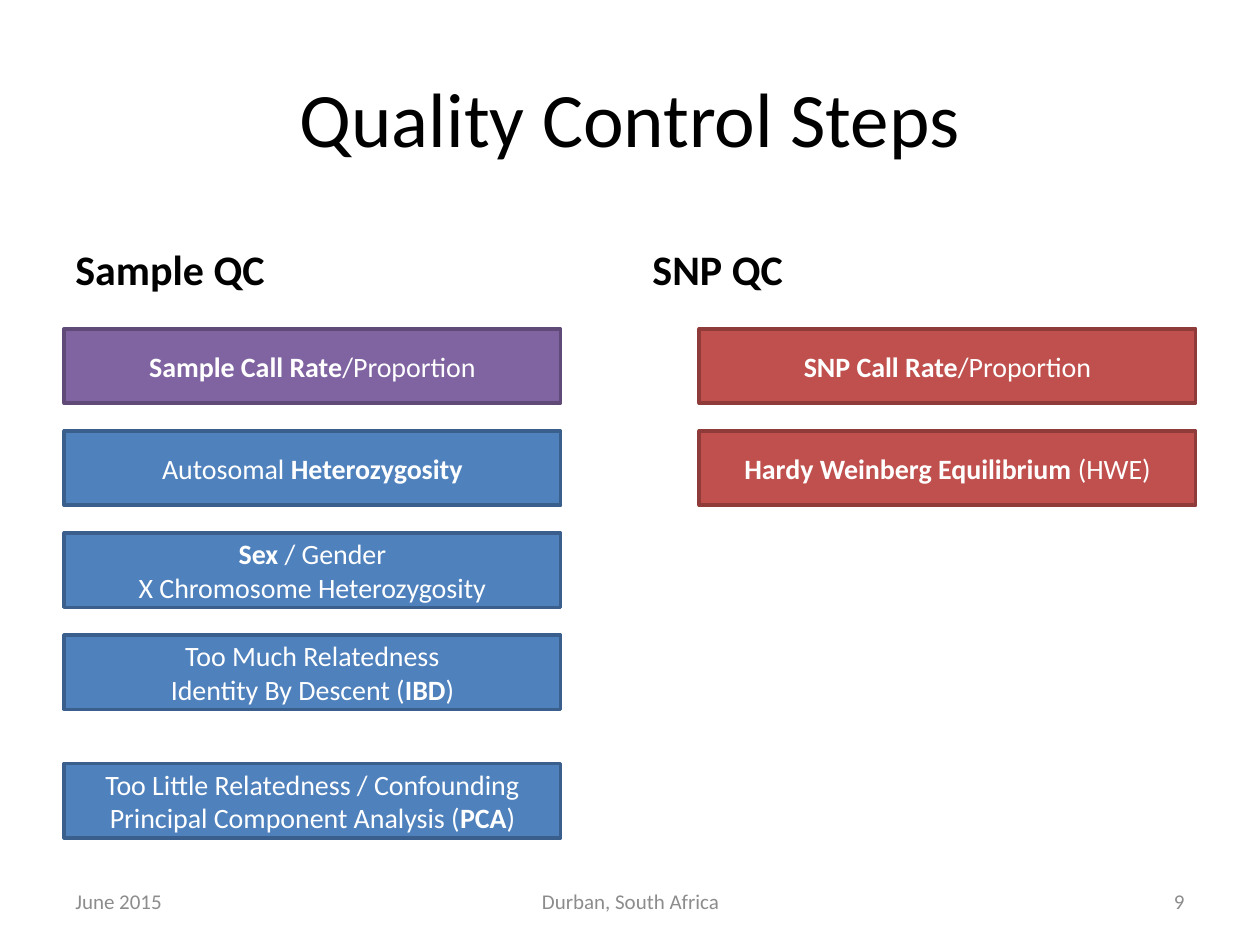
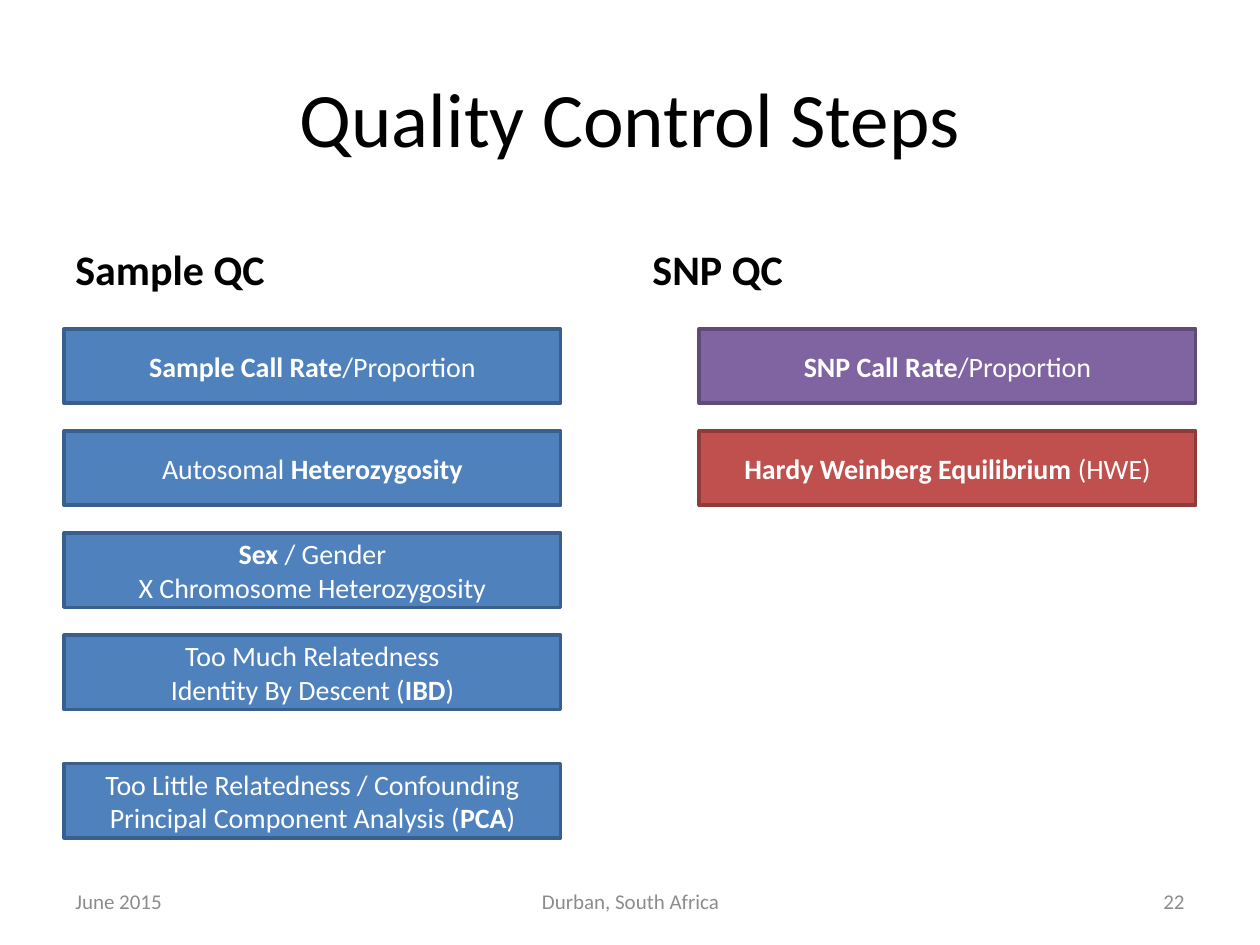
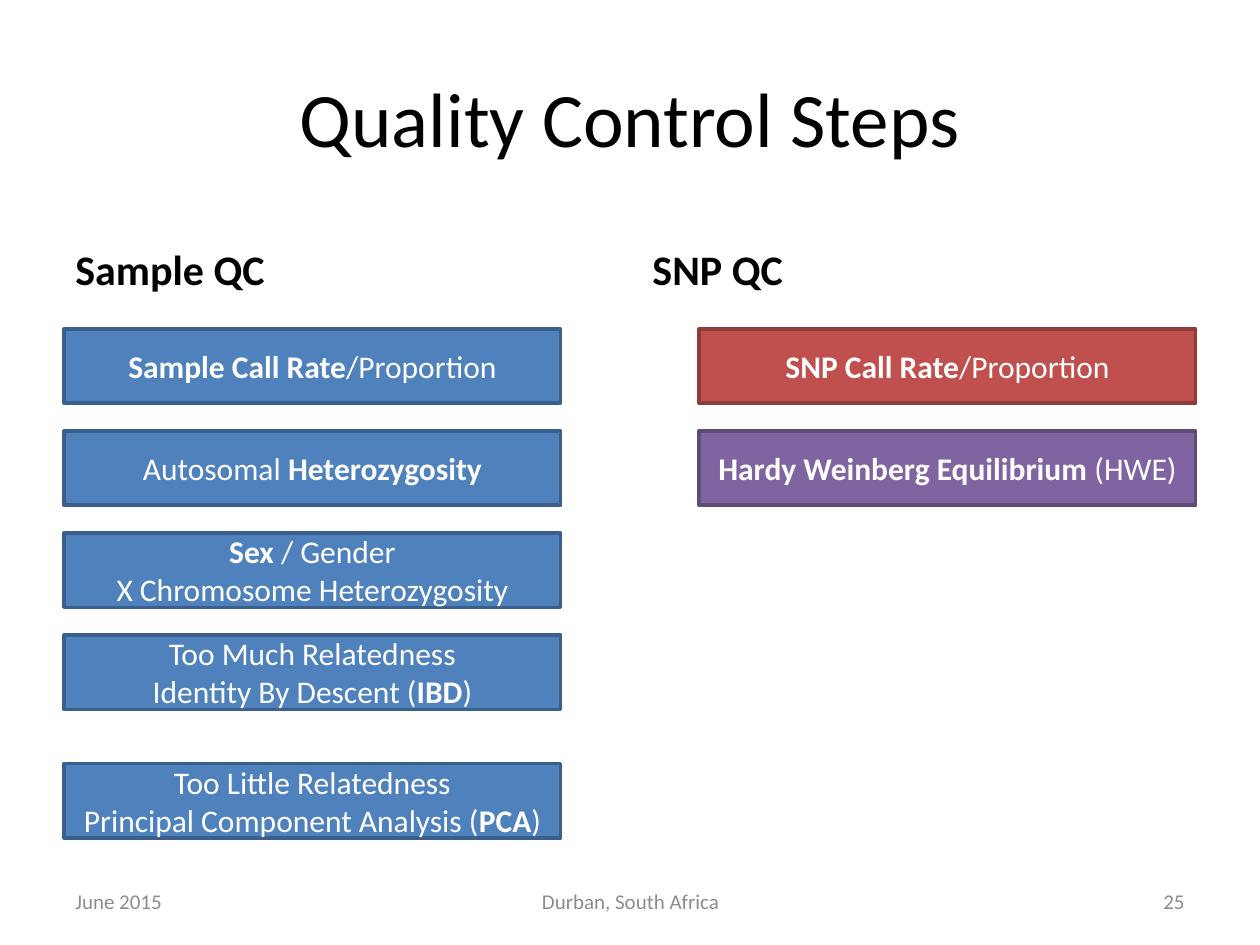
from pptx import Presentation
from pptx import util as u
from pptx.dml.color import RGBColor
from pptx.enum import shapes, text

COLOURS = {"ink": "000000", "white": "FFFFFF", "footer": "8C8C8C"}
# Fill and line of each kind of step
STEP_COLOURS = {
    "sample": ("4F81BD", "3A5F8C"),
    "snp": ("C0504D", "8E3B39"),
    "current": ("8064A2", "5F4A78"),
}
LEFT, CENTRE, RIGHT = text.PP_ALIGN.LEFT, text.PP_ALIGN.CENTER, text.PP_ALIGN.RIGHT
MIDDLE, BOTTOM = text.MSO_ANCHOR.MIDDLE, text.MSO_ANCHOR.BOTTOM

# Step grid, in inches
FIRST_TOP, PITCH, LAST_EXTRA = 2.61, 0.81, 0.21
STEP_WIDTH, STEP_HEIGHT = 3.94, 0.59
COLUMN_LEFT = {"sample": 0.51, "snp": 5.55}

# Text between asterisks is bold
LAST_STEP = "Too Little Relatedness / Confounding\nPrincipal Component Analysis (*PCA*)"
STEPS = {
    "sample": [
        "*Sample Call Rate*/Proportion",
        "Autosomal *Heterozygosity*",
        "*Sex* / Gender\nX Chromosome Heterozygosity",
        "Too Much Relatedness\nIdentity By Descent (*IBD*)",
        LAST_STEP,
    ],
    "snp": [
        "*SNP Call Rate*/Proportion",
        "*Hardy Weinberg Equilibrium* (HWE)",
    ],
}

# Page number, current step (column, row), step text size, last sample step
PAGES = [
    (9, ("sample", 0), 16, LAST_STEP),
    (22, ("snp", 0), 16, LAST_STEP),
    (25, ("snp", 1), 18, LAST_STEP.replace(" / Confounding", "")),
]


class Deck:
    """Holds the style and the current slide."""

    font = "Calibri"

    def __init__(self):
        self.presentation = Presentation()
        self.presentation.slide_width = u.Inches(10)
        self.presentation.slide_height = u.Inches(7.5)
        self.slide = None

    def fill_text(self, shape, content, size, colour, align=LEFT, anchor=MIDDLE):
        frame = shape.text_frame
        frame_format = {"word_wrap": True, "vertical_anchor": anchor,
                        "auto_size": text.MSO_AUTO_SIZE.NONE}
        for name, value in frame_format.items():
            setattr(frame, name, value)
        for number, line in enumerate(content.split("\n")):
            paragraph = frame.add_paragraph() if number else frame.paragraphs[0]
            paragraph.alignment = align
            for position, part in enumerate(line.split("*")):
                if part:
                    run = paragraph.add_run()
                    run.text = part
                    font_format = {"name": self.font, "size": u.Pt(size),
                                   "bold": position % 2 == 1}
                    for name, value in font_format.items():
                        setattr(run.font, name, value)
                    run.font.color.rgb = RGBColor.from_string(COLOURS[colour])

    def add_slide(self, title):
        layout = self.presentation.slide_layouts.get_by_name("Title Only")
        self.slide = self.presentation.slides.add_slide(layout)
        shape = self.slide.shapes.title
        place = {"left": 0.5, "top": 0.3, "width": 9, "height": 1.25}
        for name, value in place.items():
            setattr(shape, name, u.Inches(value))
        self.fill_text(shape, title, 44, "ink", CENTRE)

    def add_text(self, box, content, size, colour, align=LEFT, anchor=MIDDLE):
        shape = self.slide.shapes.add_textbox(*map(u.Inches, box))
        self.fill_text(shape, content, size, colour, align, anchor)

    def add_headings(self):
        for left, heading in ((0.5, "*Sample QC*"), (5.08, "*SNP QC*")):
            self.add_text((left, 1.68, 4.42, 0.7), heading, 24, "ink", anchor=BOTTOM)

    def add_footer(self, page):
        for left, width, content, align in (
            (0.5, 2.33, "June 2015", LEFT),
            (3.42, 3.17, "Durban, South Africa", CENTRE),
            (7.17, 2.33, str(page), RIGHT),
        ):
            self.add_text((left, 6.95, width, 0.4), content, 12, "footer", align)

    def add_step(self, column, row, content, size, kind):
        top = FIRST_TOP + row * PITCH + (LAST_EXTRA if row == 4 else 0)
        box = (COLUMN_LEFT[column], top, STEP_WIDTH, STEP_HEIGHT)
        shape = self.slide.shapes.add_shape(
            shapes.MSO_SHAPE.RECTANGLE, *map(u.Inches, box))
        shape.shadow.inherit = False
        fill, line = STEP_COLOURS[kind]
        shape.fill.solid()
        shape.fill.fore_color.rgb = RGBColor.from_string(fill)
        shape.line.color.rgb = RGBColor.from_string(line)
        shape.line.width = u.Pt(2)
        self.fill_text(shape, content, size, "white", CENTRE)


def main():
    deck = Deck()
    for page, current, size, last_step in PAGES:
        deck.add_slide("Quality Control Steps")
        deck.add_headings()
        deck.add_footer(page)
        # Steps of both columns, with the current one highlighted
        for column, steps in STEPS.items():
            for row, content in enumerate(steps):
                kind = "current" if (column, row) == current else column
                label = last_step if content == LAST_STEP else content
                deck.add_step(column, row, label, size, kind)
    deck.presentation.save("out.pptx")


if __name__ == "__main__":
    main()
